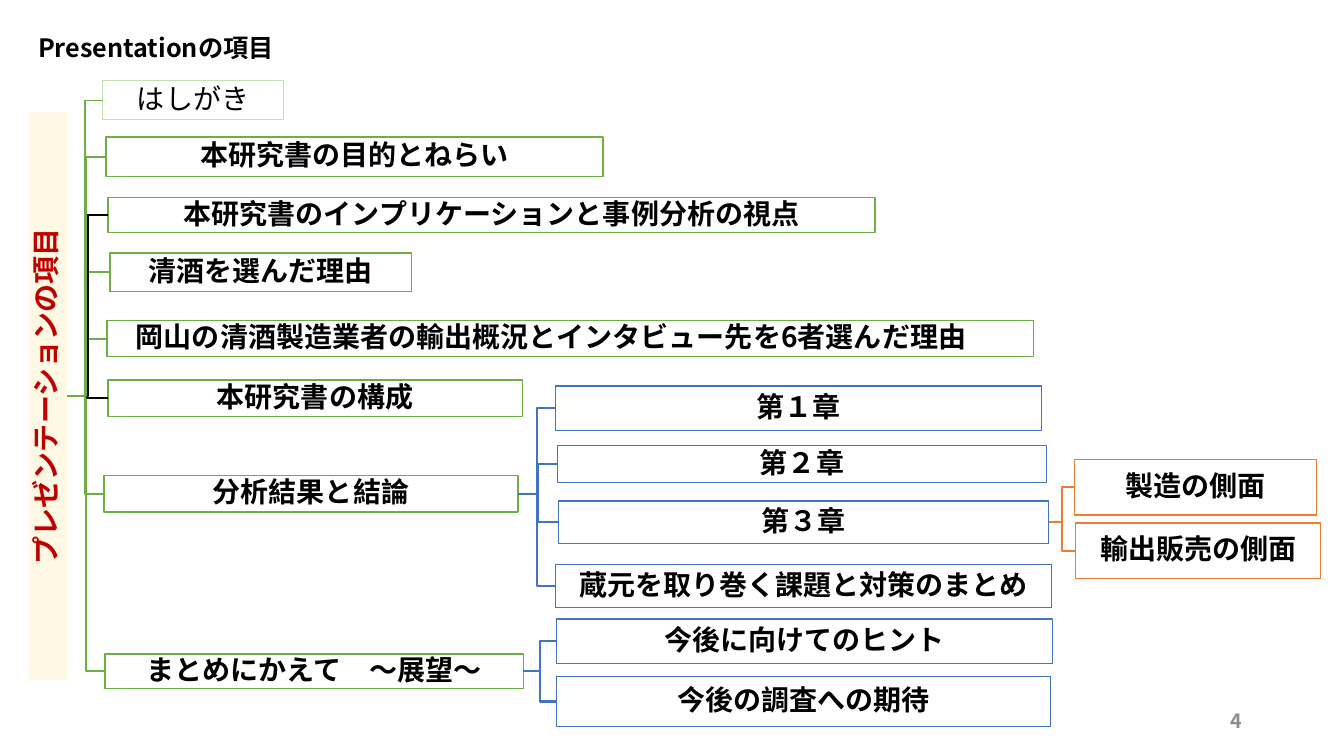
from lxml import etree
from pptx import Presentation, util as u
from pptx.dml.color import RGBColor
from pptx.enum import shapes, text
from pptx.oxml import ns

FONT = "Noto Sans CJK JP"
GREEN, BLUE, ORANGE = "70AD47", "4472C4", "ED7D31"
BLACK, PALE_GREEN = "000000", "C5E0B4"


def paint(color_format, color):
    color_format.rgb = RGBColor.from_string(color)


def write(shape, words, size, color=BLACK, bold=True, align=text.PP_ALIGN.CENTER):
    frame = shape.text_frame
    frame.word_wrap = True
    frame.vertical_anchor = text.MSO_ANCHOR.MIDDLE
    paragraph = frame.paragraphs[0]
    paragraph.alignment = align
    run = paragraph.add_run()
    run.text = words
    run.font.size, run.font.bold, run.font.name = u.Pt(size), bold, FONT
    paint(run.font.color, color)
    east_asian = etree.SubElement(run._r.get_or_add_rPr(), ns.qn("a:ea"))
    east_asian.set("typeface", FONT)
    return paragraph


presentation = Presentation()
presentation.slide_width, presentation.slide_height = u.Inches(13.33), u.Inches(7.5)
slide = presentation.slides.add_slide(presentation.slide_layouts[6])

# Tree boxes: name, parent, left, top, width, height, outline, branch colour, branch width
ROOT = "プレゼンテーションの項目"
RESULTS, OUTLOOK, CHAPTER_3 = "分析結果と結論", "まとめにかえて　～展望～", "第３章"
PREFACE = "はしがき"
SELECTION = "　岡山の清酒製造業者の輸出概況とインタビュー先を6者選んだ理由"
boxes = [
    (ROOT, None, -2.34, 3.74, 5.63, 0.38, None, None, 0),
    (PREFACE, ROOT, 1.02, 0.8, 1.79, 0.39, PALE_GREEN, GREEN, 1),
    ("本研究書の目的とねらい", ROOT, 1.05, 1.36, 4.93, 0.39, GREEN, GREEN, 1.5),
    ("本研究書のインプリケーションと事例分析の視点", ROOT, 1.07, 1.96, 7.61, 0.35, GREEN, BLACK, 1.5),
    ("清酒を選んだ理由", ROOT, 1.09, 2.51, 2.99, 0.38, GREEN, GREEN, 1),
    (SELECTION, ROOT, 1.06, 3.18, 9.19, 0.36, GREEN, GREEN, 1.5),
    ("本研究書の構成", ROOT, 1.07, 3.77, 4.11, 0.36, GREEN, BLACK, 1.5),
    (RESULTS, ROOT, 1.03, 4.72, 4.11, 0.36, GREEN, GREEN, 1.5),
    ("第１章", RESULTS, 5.51, 3.83, 4.82, 0.44, BLUE, BLUE, 1.5),
    ("第２章", RESULTS, 5.53, 4.42, 4.85, 0.37, BLUE, BLUE, 1.5),
    (CHAPTER_3, RESULTS, 5.54, 4.97, 4.86, 0.42, BLUE, BLUE, 1.5),
    ("製造の側面", CHAPTER_3, 10.66, 4.56, 2.4, 0.55, ORANGE, ORANGE, 1.5),
    ("輸出販売の側面", CHAPTER_3, 10.67, 5.19, 2.43, 0.55, ORANGE, ORANGE, 1.5),
    ("蔵元を取り巻く課題と対策のまとめ", RESULTS, 5.51, 5.6, 4.92, 0.43, BLUE, BLUE, 1.5),
    (OUTLOOK, ROOT, 1.04, 6.49, 4.15, 0.34, GREEN, GREEN, 1.5),
    ("今後に向けてのヒント", OUTLOOK, 5.52, 6.14, 4.92, 0.44, BLUE, BLUE, 1.5),
    ("今後の調査への期待", OUTLOOK, 5.52, 6.71, 4.9, 0.5, BLUE, BLUE, 1.5),
]
nodes = {}
for name, parent, left, top, width, height, outline, _, _ in boxes:
    shape = slide.shapes.add_shape(
        shapes.MSO_SHAPE.RECTANGLE, *map(u.Inches, (left, top, width, height)))
    shape.shadow.inherit = False
    if name == PREFACE:
        shape.fill.background()
    else:
        shape.fill.solid()
        paint(shape.fill.fore_color, "FFF8E5" if name == ROOT else "FFFFFF")
    if outline:
        paint(shape.line.color, outline)
        shape.line.width = u.Pt(0.75 if name == PREFACE else 1)
    else:
        shape.line.fill.background()
        shape.rotation = 270
    frame = shape.text_frame
    frame.margin_left = frame.margin_right = u.Inches(0.01)
    frame.margin_top = frame.margin_bottom = u.Inches(0.01)
    paragraph = write(
        shape, name, 20, "C00000" if name == ROOT else BLACK, name != PREFACE,
        text.PP_ALIGN.LEFT if name == SELECTION else text.PP_ALIGN.CENTER)
    paragraph.line_spacing = 0.9
    paragraph.space_after = u.Pt(7)
    nodes[name] = shape

# Branches, last one at the back
for name, parent, *_, color, weight in reversed(boxes[1:]):
    source = nodes[parent]
    branch = slide.shapes.add_connector(shapes.MSO_CONNECTOR.ELBOW, 0, 0, 0, 0)
    branch.begin_connect(source, 2 if parent == ROOT else 3)
    branch.end_connect(nodes[name], 1)
    if parent == ROOT:
        # The bottom side of the turned box faces right
        branch.begin_x = source.left + (source.width + source.height) // 2
        branch.begin_y = source.top + source.height // 2
    paint(branch.line.color, color)
    branch.line.width = u.Pt(weight)
    etree.SubElement(branch._element.spPr, ns.qn("a:effectLst"))

# Title and page number
title = slide.shapes.add_textbox(*map(u.Inches, (0.28, 0.27, 2.96, 0.4)))
write(title, "Presentationの項目", 18, align=text.PP_ALIGN.LEFT)
page_number = slide.shapes.add_textbox(*map(u.Inches, (9.42, 6.95, 3, 0.4)))
write(page_number, "4", 14, "8C8C8C", align=text.PP_ALIGN.RIGHT)

presentation.save("out.pptx")
